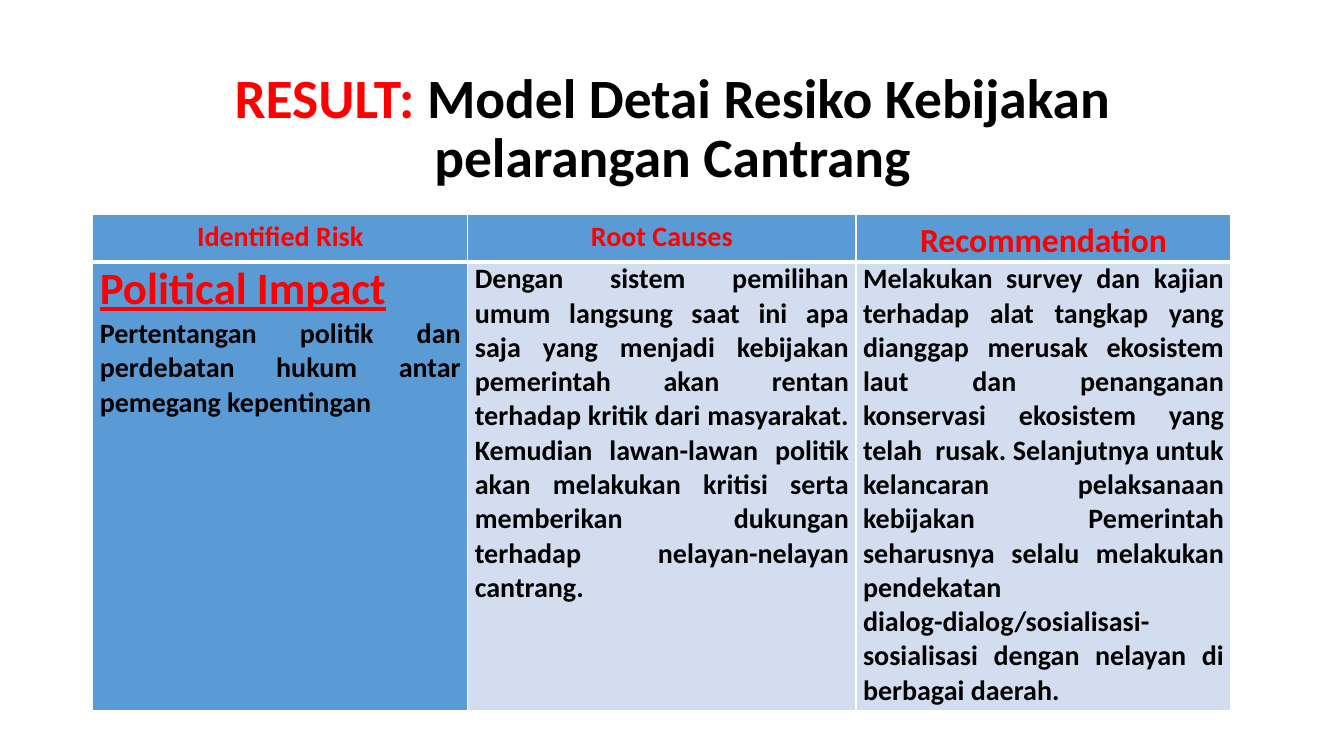
from dataclasses import dataclass

from lxml import etree
from pptx import Presentation
from pptx.dml.color import RGBColor
from pptx.enum.text import MSO_ANCHOR, MSO_AUTO_SIZE, PP_ALIGN
from pptx.oxml.ns import qn
from pptx.util import Inches, Pt

CENTER = PP_ALIGN.CENTER
JUSTIFY = PP_ALIGN.JUSTIFY
TOP = MSO_ANCHOR.TOP
MIDDLE = MSO_ANCHOR.MIDDLE
NO_AUTOFIT = MSO_AUTO_SIZE.NONE
TITLE_ONLY_LAYOUT = 5


@dataclass(frozen=True)
class Theme:
    font: str = "Calibri"
    accent: str = "FF0000"
    ink: str = "000000"
    strong_fill: str = "5B9BD5"
    soft_fill: str = "D2DEEF"
    border: str = "FFFFFF"
    title_size: float = 39.6
    risk_size: float = 32
    large_header_size: float = 24
    text_size: float = 20


THEME = Theme()

TITLE_PARTS = [
    ("RESULT: ", THEME.accent),
    ("Model Detai Resiko Kebijakan pelarangan Cantrang", THEME.ink),
]
HEADERS = [
    ("Identified Risk", THEME.text_size),
    ("Root Causes", THEME.text_size),
    ("Recommendation", THEME.large_header_size),
]
RISK_NAME = "Political Impact"
DETAILS = [
    [
        RISK_NAME,
        "Pertentangan politik dan perdebatan hukum antar pemegang kepentingan",
    ],
    [
        "Dengan sistem pemilihan umum langsung saat ini apa saja yang menjadi "
        "kebijakan pemerintah akan rentan terhadap kritik dari masyarakat. "
        "Kemudian lawan-lawan politik akan melakukan kritisi serta memberikan "
        "dukungan terhadap nelayan-nelayan cantrang."
    ],
    [
        "Melakukan survey dan kajian terhadap alat tangkap yang dianggap merusak "
        "ekosistem laut dan penanganan konservasi ekosistem yang telah  rusak. "
        "Selanjutnya untuk kelancaran pelaksanaan kebijakan Pemerintah seharusnya "
        "selalu melakukan pendekatan dialog-dialog/sosialisasi-sosialisasi dengan "
        "nelayan di berbagai daerah."
    ],
]
COLUMN_WIDTHS = [3.72, 3.85, 3.72]
ROW_HEIGHTS = [0.47, 4.45]


def format_run(run, size, color, underline=False):
    run.font.name = THEME.font
    run.font.size = Pt(size)
    run.font.bold = True
    run.font.underline = underline
    run.font.color.rgb = RGBColor.from_string(color)


def add_title(slide, left, top, width, height):
    title = slide.shapes.title
    title.left, title.top = Inches(left), Inches(top)
    title.width, title.height = Inches(width), Inches(height)
    frame = title.text_frame
    frame.word_wrap = True
    frame.auto_size = NO_AUTOFIT
    frame.vertical_anchor = MIDDLE
    paragraph = frame.paragraphs[0]
    paragraph.alignment = CENTER
    paragraph.line_spacing = 0.9
    for text, color in TITLE_PARTS:
        run = paragraph.add_run()
        run.text = text
        format_run(run, THEME.title_size, color)


def set_borders(cell, bottom_width, top_width):
    properties = cell._tc.get_or_add_tcPr()
    widths = {"lnL": 1, "lnR": 1, "lnT": top_width, "lnB": bottom_width}
    for side, width in widths.items():
        line = etree.SubElement(properties, qn(f"a:{side}"), w=str(Pt(width)))
        fill = etree.SubElement(line, qn("a:solidFill"))
        etree.SubElement(fill, qn("a:srgbClr"), val=THEME.border)


def prepare_cell(cell, fill_color, top_width, bottom_width):
    set_borders(cell, bottom_width, top_width)
    cell.margin_left = cell.margin_right = Inches(0.07)
    cell.margin_top = cell.margin_bottom = 0
    cell.vertical_anchor = TOP
    cell.fill.solid()
    cell.fill.fore_color.rgb = RGBColor.from_string(fill_color)


def fill_header(cell, text, size):
    prepare_cell(cell, THEME.strong_fill, top_width=1, bottom_width=3)
    cell.text_frame.text = text
    paragraph = cell.text_frame.paragraphs[0]
    paragraph.alignment = CENTER
    paragraph.line_spacing = 1.15
    format_run(paragraph.runs[0], size, THEME.accent)


def fill_detail(cell, texts, fill_color):
    prepare_cell(cell, fill_color, top_width=3, bottom_width=1)
    cell.text_frame.text = "\n".join(texts)
    for paragraph in cell.text_frame.paragraphs:
        paragraph.alignment = JUSTIFY
        if paragraph.text == RISK_NAME:
            format_run(paragraph.runs[0], THEME.risk_size, THEME.accent, underline=True)
        else:
            format_run(paragraph.runs[0], THEME.text_size, THEME.ink)


def add_risk_table(slide, left, top):
    table = slide.shapes.add_table(
        len(ROW_HEIGHTS),
        len(COLUMN_WIDTHS),
        Inches(left),
        Inches(top),
        Inches(sum(COLUMN_WIDTHS)),
        Inches(sum(ROW_HEIGHTS)),
    ).table
    for row, height in zip(table.rows, ROW_HEIGHTS):
        row.height = Inches(height)
    for index, width in enumerate(COLUMN_WIDTHS):
        table.columns[index].width = Inches(width)
        fill_header(table.cell(0, index), *HEADERS[index])
        fill_color = THEME.strong_fill if index == 0 else THEME.soft_fill
        fill_detail(table.cell(1, index), DETAILS[index], fill_color)


def main():
    presentation = Presentation()
    presentation.slide_width = Inches(13.33)
    presentation.slide_height = Inches(7.5)
    slide = presentation.slides.add_slide(presentation.slide_layouts[TITLE_ONLY_LAYOUT])
    add_title(slide, 0.92, 0.73, 11.5, 1.12)
    add_risk_table(slide, 0.92, 2.13)
    presentation.save("out.pptx")


if __name__ == "__main__":
    main()
